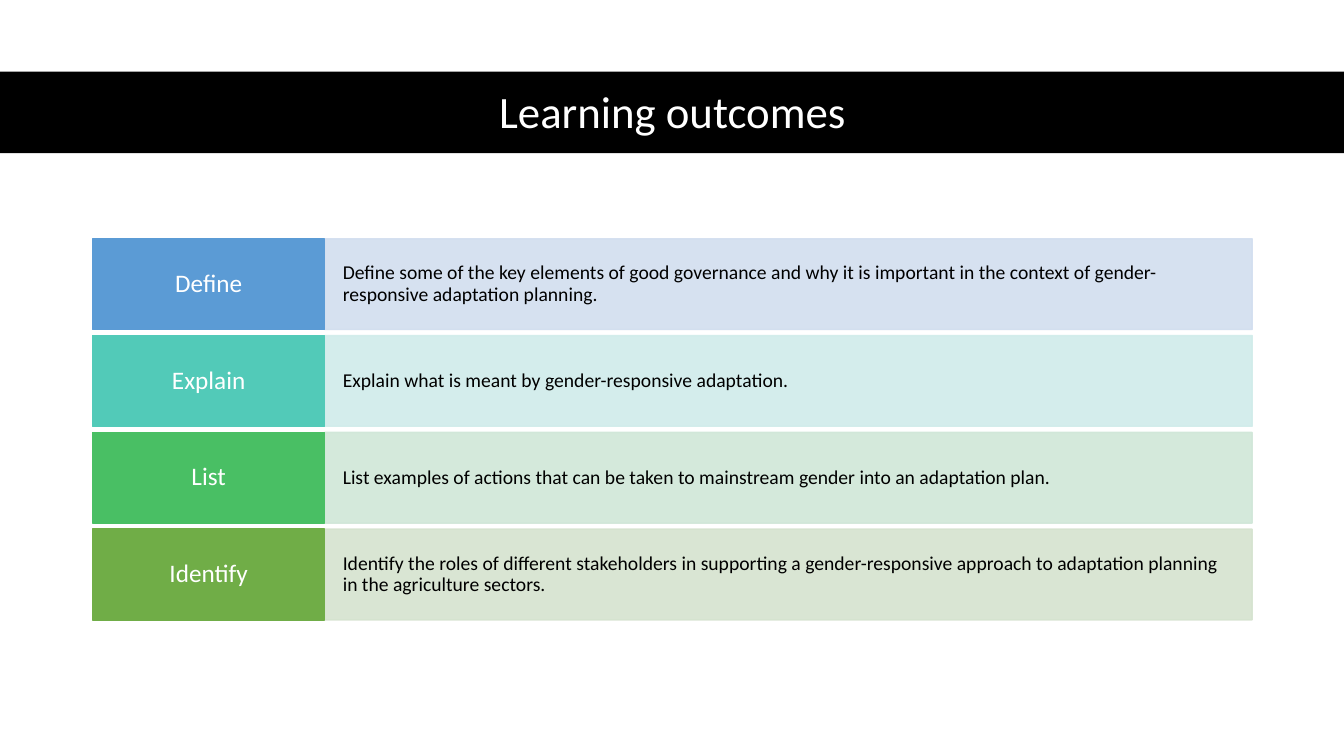
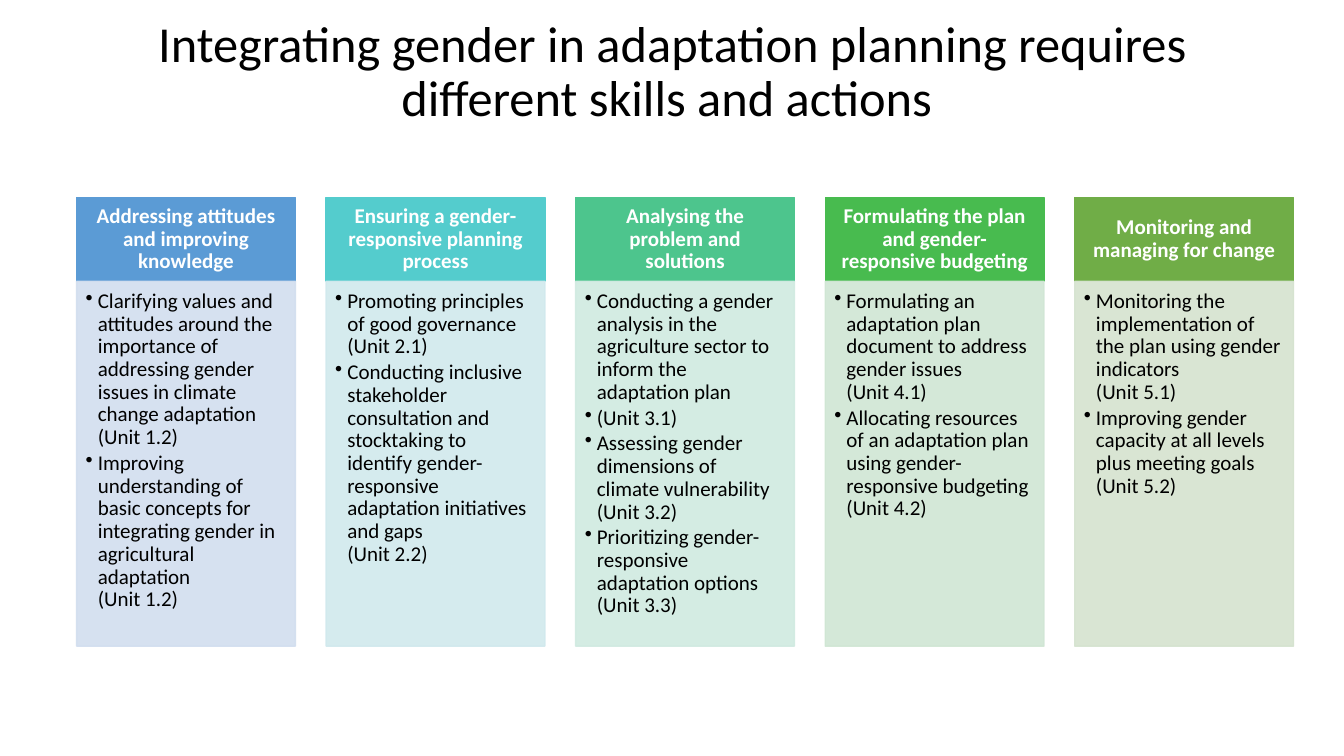
from dataclasses import dataclass

from lxml.etree import SubElement
from pptx import Presentation
from pptx.dml.color import RGBColor
from pptx.enum.shapes import MSO_SHAPE
from pptx.enum.text import MSO_ANCHOR, MSO_AUTO_SIZE, PP_ALIGN
from pptx.oxml.ns import qn
from pptx.util import Inches, Pt


@dataclass(frozen=True)
class Theme:
    font: str = "Calibri"
    dark: str = "000000"
    light: str = "FFFFFF"
    band_title: int = 32
    page_title: int = 36
    row_label: int = 18
    row_text: int = 14
    column_text: int = 15
    line_spacing: float = 0.9
    tint_alpha: int = 90


OUTCOMES = [
    ("Define", "5B9BD5", "D2DEEF",
     "Define some of the key elements of good governance and why it is important "
     "in the context of gender-responsive adaptation planning."),
    ("Explain", "52CAB8", "D0ECEA",
     "Explain what is meant by gender-responsive adaptation."),
    ("List", "49BF64", "D0E7D8",
     "List examples of actions that can be taken to mainstream gender into an adaptation plan."),
    ("Identify", "70AD47", "D5E3CF",
     "Identify the roles of different stakeholders in supporting a gender-responsive "
     "approach to adaptation planning in the agriculture sectors."),
]

SKILLS = [
    ("Addressing attitudes and improving knowledge", "5B9BD5", "D2DEEF", [
        "Clarifying values and attitudes around the importance of addressing gender "
        "issues in climate change adaptation\n(Unit 1.2)",
        "Improving understanding of basic concepts for integrating gender in "
        "agricultural adaptation\n(Unit 1.2)"]),
    ("Ensuring a gender-responsive planning process", "54CCCD", "D1E9ED", [
        "Promoting principles of good governance\n(Unit 2.1)",
        "Conducting inclusive stakeholder consultation and stocktaking to identify "
        "gender-responsive adaptation initiatives and gaps\n(Unit 2.2)"]),
    ("Analysing the problem and solutions", "4DC58D", "D0EAE1", [
        "Conducting a gender analysis in the agriculture sector to inform the adaptation plan",
        "(Unit 3.1)",
        "Assessing gender dimensions of climate vulnerability\n(Unit 3.2)",
        "Prioritizing gender-responsive adaptation options\n(Unit 3.3)"]),
    ("Formulating the plan and gender-responsive budgeting", "48BB4F", "D0E6D4", [
        "Formulating an adaptation plan document to address gender issues \n(Unit 4.1)",
        "Allocating resources of an adaptation plan using gender-responsive budgeting\n(Unit 4.2)"]),
    ("Monitoring and managing for change", "70AD47", "D5E3CF", [
        "Monitoring the implementation of the plan using gender indicators\n(Unit 5.1)",
        "Improving gender capacity at all levels plus meeting goals \n(Unit 5.2)"]),
]


class DeckBuilder:
    def __init__(self, theme):
        self.theme = theme
        self.deck = Presentation()
        self.deck.slide_width = Inches(13.33)
        self.deck.slide_height = Inches(7.5)
        self.page = None

    def add_page(self):
        self.page = self.deck.slides.add_slide(self.deck.slide_layouts[5])

    def title(self, text, top, height, size, color):
        box = self.page.shapes.title
        box.left, box.top = Inches(0.92), Inches(top)
        box.width, box.height = Inches(11.5), Inches(height)
        frame = box.text_frame
        frame.text = text
        frame.word_wrap = True
        frame.auto_size = MSO_AUTO_SIZE.NONE
        frame.vertical_anchor = MSO_ANCHOR.MIDDLE
        self.style(frame.paragraphs[0], size, color, PP_ALIGN.CENTER)

    def band(self, top, height):
        box = self.block(0, top, 13.33, height, self.theme.dark)
        box.line.fill.background()
        self.page.shapes._spTree.insert(2, box._element)

    def block(self, left, top, width, height, color, tinted=False):
        box = self.page.shapes.add_shape(
            MSO_SHAPE.RECTANGLE, Inches(left), Inches(top), Inches(width), Inches(height))
        box.shadow.inherit = False
        box.line.width = Pt(1)
        for fill in (box.fill, box.line.fill):
            fill.solid()
            fill.fore_color.rgb = RGBColor.from_string(color)
        if tinted:
            for node in box._element.spPr.iter(qn("a:srgbClr")):
                SubElement(node, qn("a:alpha"), val=str(self.theme.tint_alpha * 1000))
        return box

    def label(self, box, text, size, margin, bold=False):
        frame = self.frame(box, (0.12, margin, 0.12, margin), MSO_ANCHOR.MIDDLE)
        frame.text = text
        self.style(frame.paragraphs[0], size, self.theme.light, PP_ALIGN.CENTER, bold)

    def description(self, box, text):
        frame = self.frame(box, (0.18, 0.23, 0.18, 0.23), MSO_ANCHOR.MIDDLE)
        frame.text = text
        self.style(frame.paragraphs[0], self.theme.row_text, self.theme.dark)

    def bullets(self, box, items):
        size = self.theme.column_text
        frame = self.frame(box, (0.09, 0.09, 0.12, 0.13), MSO_ANCHOR.TOP)
        for index, item in enumerate(items):
            para = frame.add_paragraph() if index else frame.paragraphs[0]
            para.text = item
            para.level = 1
            para.space_after = Pt(size * 0.15)
            self.style(para, size, self.theme.dark)
            properties = para._p.get_or_add_pPr()
            properties.set("marL", str(Inches(0.12)))
            properties.set("indent", str(-Inches(0.12)))
            SubElement(properties, qn("a:buChar"), char="•")

    def frame(self, box, margins, anchor):
        frame = box.text_frame
        frame.word_wrap = True
        frame.vertical_anchor = anchor
        (frame.margin_left, frame.margin_top,
         frame.margin_right, frame.margin_bottom) = map(Inches, margins)
        return frame

    def style(self, para, size, color, align=PP_ALIGN.LEFT, bold=False):
        para.alignment = align
        para.line_spacing = self.theme.line_spacing
        for span in para.runs:
            span.font.name = self.theme.font
            span.font.size = Pt(size)
            span.font.bold = bold
            span.font.color.rgb = RGBColor.from_string(color)
        for line_break in para._p.findall(qn("a:br")):
            SubElement(line_break, qn("a:rPr"), sz=str(size * 100))


def outcomes_page(builder):
    theme = builder.theme
    builder.add_page()
    builder.band(0.71, 0.81)
    builder.title("Learning outcomes", 0.74, 0.78, theme.band_title, theme.light)
    left, label_width, text_width, height, pitch = 0.92, 2.3, 9.2, 0.9, 0.96
    for index, (name, color, tint, text) in enumerate(OUTCOMES):
        top = 2.37 + index * pitch
        body = builder.block(left + label_width, top, text_width, height, tint, tinted=True)
        builder.description(body, text)
        head = builder.block(left, top, label_width, height, color)
        builder.label(head, name, theme.row_label, 0.09)


def skills_page(builder):
    theme = builder.theme
    builder.add_page()
    builder.title("Integrating gender in adaptation planning requires different skills and actions ",
                  0, 1.45, theme.page_title, theme.dark)
    first, last, width = 0.76, 10.66, 2.17
    top, head_height, body_height = 1.96, 0.83, 3.62
    pitch = (last - first) / (len(SKILLS) - 1)
    for index, (heading, color, tint, items) in enumerate(SKILLS):
        left = first + index * pitch
        head = builder.block(left, top, width, head_height, color)
        builder.label(head, heading, theme.column_text, 0.07, bold=True)
        body = builder.block(left, top + head_height, width, body_height, tint, tinted=True)
        builder.bullets(body, items)


def main():
    builder = DeckBuilder(Theme())
    outcomes_page(builder)
    skills_page(builder)
    builder.deck.save("out.pptx")


if __name__ == "__main__":
    main()
